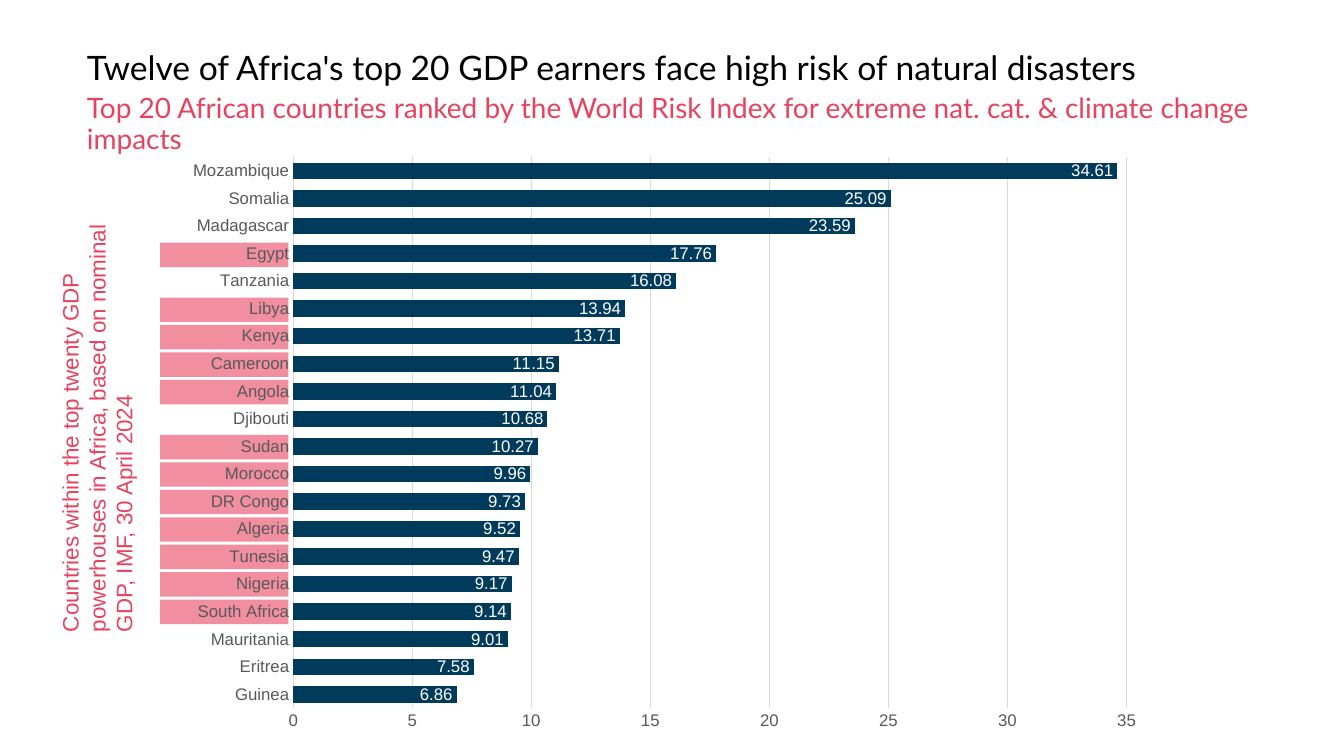
import pptx
import pptx.chart.data
import pptx.dml.color
import pptx.enum.chart
import pptx.enum.shapes
import pptx.enum.text
import pptx.oxml
import pptx.oxml.ns
import pptx.util

Pt = pptx.util.Pt
COLORS = {
    "black": "000000",
    "red": "E74360",
    "pink": "F18EA0",
    "navy": "003B5C",
    "gray": "595959",
    "grid": "D9D9D9",
    "white": "FFFFFF",
}
RISKS = [
    ("Mozambique", 34.61, False),
    ("Somalia", 25.09, False),
    ("Madagascar", 23.59, False),
    ("Egypt", 17.76, True),
    ("Tanzania", 16.08, False),
    ("Libya", 13.94, True),
    ("Kenya", 13.71, True),
    ("Cameroon", 11.15, True),
    ("Angola", 11.04, True),
    ("Djibouti", 10.68, False),
    ("Sudan", 10.27, True),
    ("Morocco", 9.96, True),
    ("DR Congo", 9.73, True),
    ("Algeria", 9.52, True),
    ("Tunesia", 9.47, True),
    ("Nigeria", 9.17, True),
    ("South Africa", 9.14, True),
    ("Mauritania", 9.01, False),
    ("Eritrea", 7.58, False),
    ("Guinea", 6.86, False),
]
ROW_TOP = 114.4
ROW_STEP = 19.62
PLOT = {"x": 0.122, "y": 0.02, "w": 0.848, "h": 0.922}


def get_color(name):
    return pptx.dml.color.RGBColor.from_string(COLORS[name])


def set_font(font, face, size, color):
    font.name = face
    font.size = Pt(size)
    font.color.rgb = get_color(color)


def add_text(slide, area, text, face, size, color, inset=None, space=None,
             anchor=pptx.enum.text.MSO_ANCHOR.TOP, turn=0):
    box = slide.shapes.add_textbox(*map(Pt, area))
    box.rotation = turn
    frame = box.text_frame
    frame.word_wrap = True
    frame.vertical_anchor = anchor
    if inset is not None:
        frame.margin_left = frame.margin_right = Pt(inset)
        frame.margin_top = frame.margin_bottom = Pt(inset)
    para = frame.paragraphs[0]
    if space:
        para.line_spacing = space
    run = para.add_run()
    run.text = text
    set_font(run.font, face, size, color)


def add_band(slide, row):
    band = slide.shapes.add_shape(
        pptx.enum.shapes.MSO_SHAPE.RECTANGLE,
        Pt(114.5), Pt(ROW_TOP + row * ROW_STEP), Pt(91.5), Pt(17.5))
    band.shadow.inherit = False
    band.fill.solid()
    band.fill.fore_color.rgb = get_color("pink")
    band.line.fill.background()


def set_line(line, color):
    line.color.rgb = get_color(color)
    line.width = Pt(0.75)


def set_plot(chart):
    parts = "".join(f'<c:{key}Mode val="edge"/>' for key in "xy")
    parts += "".join(f'<c:{key} val="{val}"/>' for key, val in PLOT.items())
    layout = pptx.oxml.parse_xml(
        f'<c:layout {pptx.oxml.ns.nsdecls("c")}><c:manualLayout>'
        f'<c:layoutTarget val="inner"/>{parts}</c:manualLayout></c:layout>')
    area = chart._chartSpace.chart.plotArea
    for old in area.findall(pptx.oxml.ns.qn("c:layout")):
        area.remove(old)
    area.insert(0, layout)


def set_axis(axis):
    axis.major_tick_mark = pptx.enum.chart.XL_TICK_MARK.NONE
    axis.minor_tick_mark = pptx.enum.chart.XL_TICK_MARK.NONE
    set_font(axis.tick_labels.font, "Arial", 12, "gray")


def add_chart(slide):
    data = pptx.chart.data.CategoryChartData()
    rows = RISKS[::-1]
    data.categories = [name for name, risk, top in rows]
    data.add_series("Series 1", [risk for name, risk, top in rows])
    chart = slide.shapes.add_chart(
        pptx.enum.chart.XL_CHART_TYPE.BAR_CLUSTERED,
        Pt(123.8), Pt(103.7), Pt(702), Pt(427), data).chart
    chart.has_legend = False
    chart.has_title = False
    set_font(chart.font, "Arial", 10, "black")
    set_plot(chart)

    names = chart.category_axis
    set_axis(names)
    names.has_major_gridlines = False
    set_line(names.format.line, "grid")
    scale = chart.value_axis
    set_axis(scale)
    scale.minimum_scale = 0
    scale.maximum_scale = 35
    scale.major_unit = 5
    scale.format.line.fill.background()
    scale.has_major_gridlines = True
    set_line(scale.major_gridlines.format.line, "grid")

    plot = chart.plots[0]
    plot.vary_by_categories = False
    plot.gap_width = 68
    plot.overlap = -6
    bars = plot.series[0]
    bars.format.fill.solid()
    bars.format.fill.fore_color.rgb = get_color("navy")
    labels = bars.data_labels
    labels.show_value = True
    labels.position = pptx.enum.chart.XL_LABEL_POSITION.INSIDE_END
    set_font(labels.font, "Arial", 12, "white")


def main():
    deck = pptx.Presentation()
    deck.slide_width = Pt(960)
    deck.slide_height = Pt(540)
    slide = deck.slides.add_slide(deck.slide_layouts[6])
    for row, (name, risk, top) in enumerate(RISKS):
        if top:
            add_band(slide, row)
    add_text(slide, (62, 31.7, 843, 31),
             "Twelve of Africa's top 20 GDP earners face high risk of natural disasters",
             "Lato", 24, "black", inset=0, space=0.9,
             anchor=pptx.enum.text.MSO_ANCHOR.BOTTOM)
    add_text(slide, (62, 67.7, 843, 31),
             "Top 20 African countries ranked by the World Risk Index "
             "for extreme nat. cat. & climate change impacts",
             "Lato", 20, "red", inset=0, space=0.9)
    add_chart(slide)
    add_text(slide, (-93.6, 262.8, 326, 65.5),
             "Countries within the top twenty GDP powerhouses in Africa, "
             "based on nominal GDP, IMF, 30 April 2024",
             "Arial", 16, "red", turn=270)
    deck.save("out.pptx")


if __name__ == "__main__":
    main()
